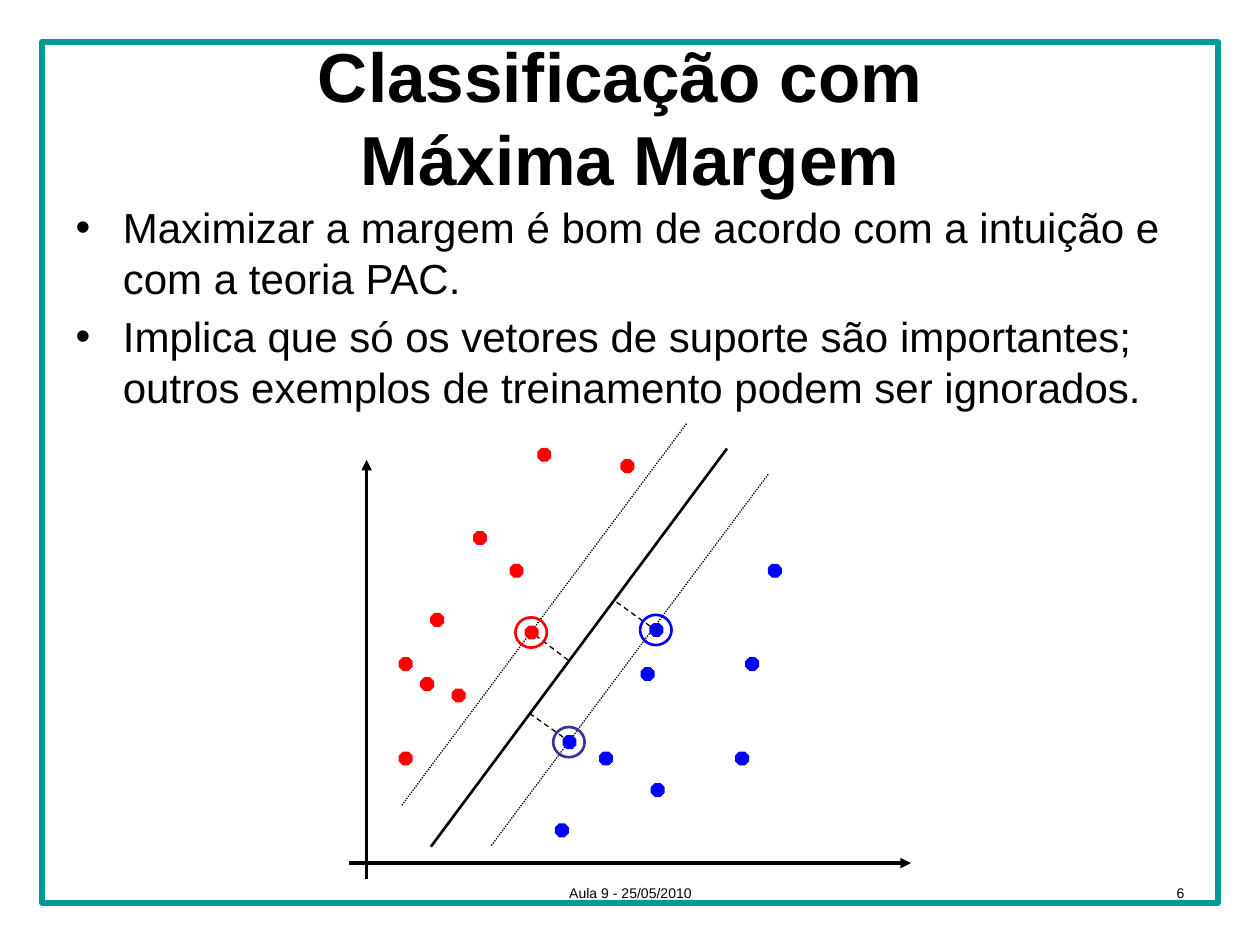
"""Build the slide on maximum-margin classification with its scatter diagram."""
from lxml.etree import SubElement
from pptx import Presentation
from pptx.dml.color import RGBColor
from pptx.enum.dml import MSO_LINE_DASH_STYLE as Dash
from pptx.enum.shapes import MSO_CONNECTOR, MSO_SHAPE as Shape
from pptx.enum.text import MSO_ANCHOR as Anchor, MSO_AUTO_SIZE as AutoSize, PP_ALIGN as Align
from pptx.oxml.ns import qn
from pptx.util import Inches, Pt

BLACK, TEAL, RED, BLUE, INDIGO = "000000", "009999", "FF0000", "0000FF", "333399"

deck = Presentation()
deck.slide_width, deck.slide_height = Inches(10), Inches(7.5)
col, row = deck.slide_width / 100, deck.slide_height / 75


def grid(x, y, across, down):
    return int(x * col), int(y * row), int(across * col), int(down * row)


def paint(part, color, weight=None, fill=None):
    rgb = RGBColor.from_string(color)
    if weight is None:
        part.color.rgb = rgb
        return
    part.line.color.rgb = rgb
    part.line.width = Pt(weight)
    if hasattr(part, "fill"):
        part.shadow.inherit = False
        if fill:
            part.fill.solid()
            part.fill.fore_color.rgb = RGBColor.from_string(fill)
        else:
            part.fill.background()
    else:
        SubElement(part.line._get_or_add_ln().getparent(), qn("a:effectLst"))


slide = deck.slides.add_slide(deck.slide_layouts[1])
shapes = slide.shapes

frame = shapes.add_shape(Shape.RECTANGLE, *grid(3.33, 3.33, 93.34, 68.34))
paint(frame, TEAL, 3)

title, body = shapes.title, slide.placeholders[1]
footer = shapes.add_textbox(*grid(34.2, 68.3, 31.7, 5.2))
number = shapes.add_textbox(*grid(71.7, 68.3, 23.3, 5.2))
title.left, title.top, title.width, title.height = grid(5, 3, 90, 12.5)
body.left, body.top, body.width, body.height = grid(5, 15.5, 90, 55)

points = [
    "Maximizar a margem é bom de acordo com a intuição e com a teoria PAC.",
    "Implica que só os vetores de suporte são importantes; "
    "outros exemplos de treinamento podem ser ignorados.",
]
for holder, texts, size, bold, align, anchor in [
    (title, ["Classificação com \vMáxima Margem"], 39.6, True, Align.CENTER, Anchor.MIDDLE),
    (body, points, 24, False, Align.LEFT, Anchor.TOP),
    (footer, ["Aula 9 - 25/05/2010"], 8, False, Align.CENTER, Anchor.MIDDLE),
    (number, ["6"], 8, False, Align.RIGHT, Anchor.MIDDLE),
]:
    words = holder.text_frame
    words.word_wrap, words.auto_size, words.vertical_anchor = True, AutoSize.NONE, anchor
    for index, text in enumerate(texts):
        paragraph = words.add_paragraph() if index else words.paragraphs[0]
        paragraph.alignment = align
        for part, piece in enumerate(text.split("\v")):
            if part:
                paragraph.add_line_break()
            run = paragraph.add_run()
            run.text = piece
            run.font.name, run.font.size, run.font.bold = "Arial", Pt(size), bold
            paint(run.font, BLACK)

for start, end, weight, dash, arrow in [
    ((29.1, 69.8), (29.1, 36.5), 2, None, True),
    ((27.7, 68.5), (72.3, 68.5), 2, None, True),
    ((34.2, 67.2), (57.7, 35.6), 1.5, None, False),
    ((39, 67.1), (61, 37.6), 0.75, Dash.ROUND_DOT, False),
    ((31.9, 63.9), (54.5, 33.6), 0.75, Dash.ROUND_DOT, False),
    ((51.6, 49.7), (48.8, 47.7), 0.75, Dash.DASH, False),
    ((44.7, 58.5), (42, 56.6), 0.75, Dash.DASH, False),
    ((45.1, 52.4), (42.6, 50.5), 0.75, Dash.DASH, False),
]:
    line = shapes.add_connector(MSO_CONNECTOR.STRAIGHT, *grid(*start, *end))
    paint(line, BLACK, weight)
    if dash:
        line.line.dash_style = dash
    if arrow:
        SubElement(line.line._get_or_add_ln(), qn("a:tailEnd"), type="triangle")

samples = {
    RED: [(40.5, 44.8), (34.2, 48.7), (35.9, 54.7), (31.7, 59.7), (37.6, 42.2), (31.7, 52.2),
          (33.4, 53.8), (41.7, 49.7), (42.7, 35.6), (49.3, 36.5)],
    BLUE: [(51.6, 49.5), (47.6, 59.7), (58.4, 59.7), (44.1, 65.4), (50.9, 53), (44.7, 58.4),
           (51.7, 62.2), (59.2, 52.2), (61, 44.8)],
}
for color, spots in samples.items():
    for x, y in spots:
        paint(shapes.add_shape(Shape.OCTAGON, *grid(x, y, 1, 1)), color, 0.75, color)

for color, x, y in [(RED, 40.9, 49), (INDIGO, 43.9, 57.7), (BLUE, 50.8, 48.8)]:
    paint(shapes.add_shape(Shape.OVAL, *grid(x, y, 2.5, 2.4)), color, 1.5)

deck.save("out.pptx")
